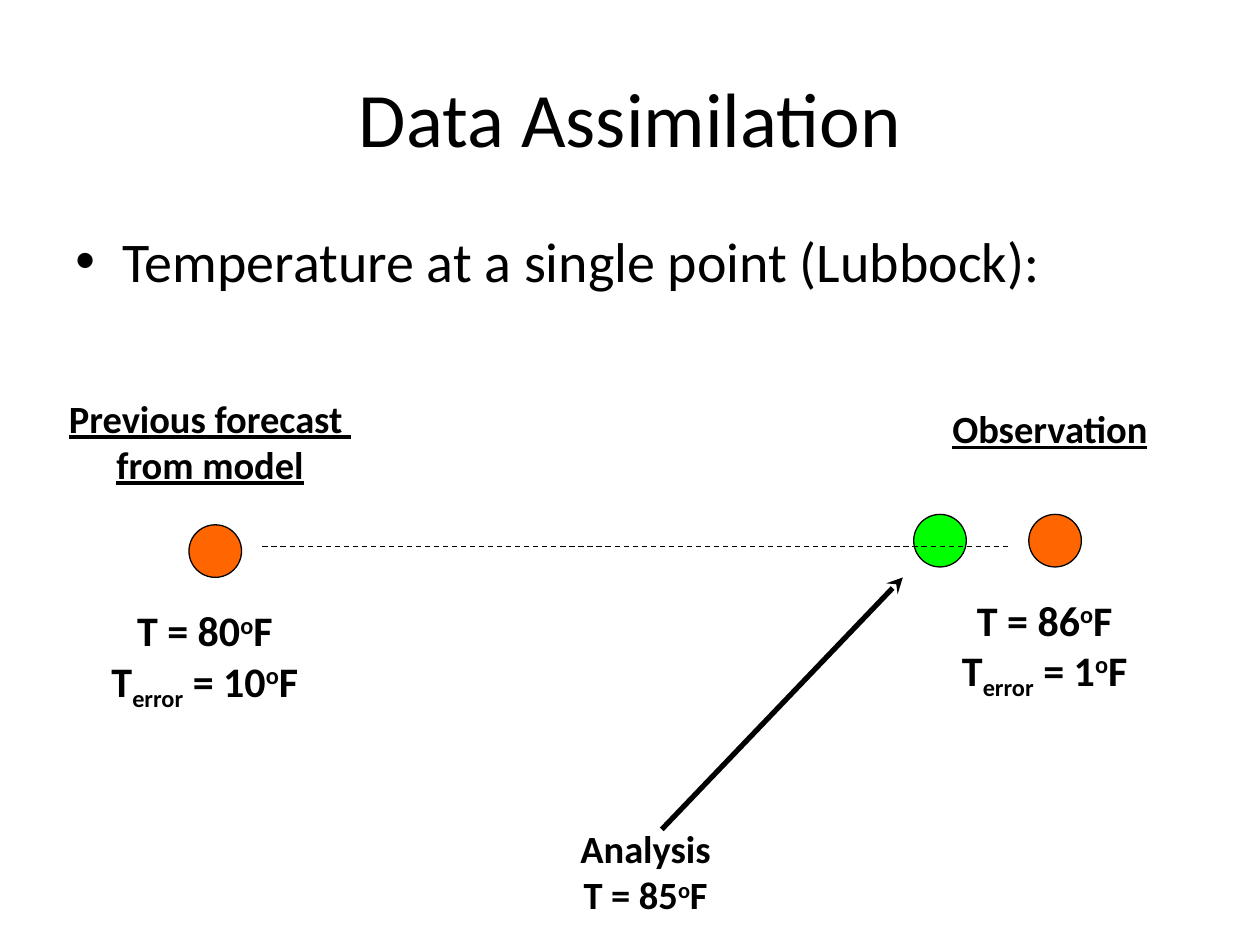
from dataclasses import dataclass

from lxml import etree
from pptx import Presentation
from pptx.dml.color import RGBColor
from pptx.enum.dml import MSO_LINE
from pptx.enum.shapes import MSO_CONNECTOR, MSO_SHAPE
from pptx.enum.text import MSO_ANCHOR, MSO_AUTO_SIZE, PP_ALIGN
from pptx.oxml.ns import qn
from pptx.util import Cm, Pt

OVAL = MSO_SHAPE.OVAL
STRAIGHT = MSO_CONNECTOR.STRAIGHT
DASH = MSO_LINE.DASH
TOP, MIDDLE = MSO_ANCHOR.TOP, MSO_ANCHOR.MIDDLE
LEFT, CENTER = PP_ALIGN.LEFT, PP_ALIGN.CENTER
GROW, FIXED = MSO_AUTO_SIZE.SHAPE_TO_FIT_TEXT, MSO_AUTO_SIZE.NONE

COLORS = {"black": "000000", "orange": "FF6600", "green": "00FF00"}
FONT_NAME = "Calibri"
DOT_SIZE = 1.06
SUPERSCRIPT, SUBSCRIPT = 30000, -25000

HEADING = {"size": Pt(22), "bold": True, "underline": True}
ANALYSIS = {"size": Pt(22), "bold": True}
READING = {"size": Pt(24), "bold": True}

Run = tuple[str, int]
Line = list[Run]


@dataclass
class Label:
    left: float
    top: float
    width: float
    height: float
    lines: list[Line]
    font: dict
    align: int = CENTER
    anchor: int = TOP
    auto_size: int = GROW
    bullet: bool = False


@dataclass
class Dot:
    left: float
    top: float
    color: str


@dataclass
class Connection:
    start: tuple[float, float]
    end: tuple[float, float]
    width: float
    dashed: bool = False
    arrow: bool = False


def plain(text: str) -> Line:
    return [(text, 0)]


def degrees(text: str) -> Line:
    """Follow the text with a raised o and F for degrees Fahrenheit."""
    return [(text, 0), ("o", SUPERSCRIPT), ("F", 0)]


def reading(temperature: int, error: int) -> list[Line]:
    return [
        degrees(f"T = {temperature}"),
        [("T", 0), ("error", SUBSCRIPT), *degrees(f" = {error}")],
    ]


LABELS = [
    Label(1.27, 0.76, 22.86, 3.18, [plain("Data Assimilation")],
          {"size": Pt(44)}, anchor=MIDDLE, auto_size=FIXED),
    Label(1.27, 4.45, 22.86, 12.57,
          [plain("Temperature at a single point (Lubbock):")],
          {"size": Pt(32)}, align=LEFT, auto_size=FIXED, bullet=True),
    Label(1.06, 12.07, 6.14, 2.31, reading(80, 10), READING),
    Label(17.99, 11.85, 6.14, 2.31, reading(86, 1), READING),
    Label(0, 7.83, 8.47, 2.12,
          [plain("Previous forecast "), plain("from model")], HEADING),
    Label(16.93, 8.04, 8.47, 1.19, [plain("Observation")], HEADING),
    Label(10.37, 16.51, 5.29, 2.12,
          [plain("Analysis"), degrees("T = 85")], ANALYSIS),
]
DOTS = [
    Dot(3.81, 10.58, "orange"),
    Dot(20.74, 10.37, "orange"),
    Dot(18.42, 10.37, "green"),
]
CONNECTIONS = [
    Connection((5.29, 11.01), (20.32, 11.01), 0.75, dashed=True),
    Connection((13.34, 16.72), (18.2, 11.64), 3, arrow=True),
]


def rgb(name: str) -> RGBColor:
    return RGBColor.from_string(COLORS[name])


def add_bullet(paragraph) -> None:
    properties = paragraph._p.get_or_add_pPr()
    properties.set("marL", str(Cm(0.95)))
    properties.set("indent", str(-Cm(0.95)))
    etree.SubElement(properties, qn("a:buFont"), typeface="Arial")
    etree.SubElement(properties, qn("a:buChar"), char="•")


def add_label(slide, label: Label) -> None:
    box = slide.shapes.add_textbox(
        Cm(label.left), Cm(label.top), Cm(label.width), Cm(label.height))
    frame = box.text_frame
    frame_format = {"word_wrap": True, "auto_size": label.auto_size,
                    "vertical_anchor": label.anchor}
    for name, value in frame_format.items():
        setattr(frame, name, value)
    for index, line in enumerate(label.lines):
        paragraph = frame.add_paragraph() if index else frame.paragraphs[0]
        paragraph.alignment = label.align
        if label.bullet:
            add_bullet(paragraph)
        for text, baseline in line:
            run = paragraph.add_run()
            run.text = text
            for name, value in {"name": FONT_NAME, **label.font}.items():
                setattr(run.font, name, value)
            run.font.color.rgb = rgb("black")
            if baseline:
                run._r.get_or_add_rPr().set("baseline", str(baseline))


def add_dot(slide, dot: Dot) -> None:
    shape = slide.shapes.add_shape(
        OVAL, Cm(dot.left), Cm(dot.top), Cm(DOT_SIZE), Cm(DOT_SIZE))
    shape.shadow.inherit = False
    shape.fill.solid()
    shape.fill.fore_color.rgb = rgb(dot.color)
    shape.line.color.rgb = rgb("black")
    shape.line.width = Pt(0.75)


def add_connection(slide, connection: Connection) -> None:
    ends = [Cm(value) for value in connection.start + connection.end]
    connector = slide.shapes.add_connector(STRAIGHT, *ends)
    connector.line.color.rgb = rgb("black")
    connector.line.width = Pt(connection.width)
    if connection.dashed:
        connector.line.dash_style = DASH
    if connection.arrow:
        etree.SubElement(connector.line._get_or_add_ln(), qn("a:tailEnd"),
                         type="stealth")
    etree.SubElement(connector._element.spPr, qn("a:effectLst"))


def main() -> None:
    presentation = Presentation()
    presentation.slide_width = Cm(25.4)
    presentation.slide_height = Cm(19.05)
    slide = presentation.slides.add_slide(presentation.slide_layouts[6])
    for label in LABELS:
        add_label(slide, label)
    for dot in DOTS:
        add_dot(slide, dot)
    for connection in CONNECTIONS:
        add_connection(slide, connection)
    presentation.save("out.pptx")


if __name__ == "__main__":
    main()
